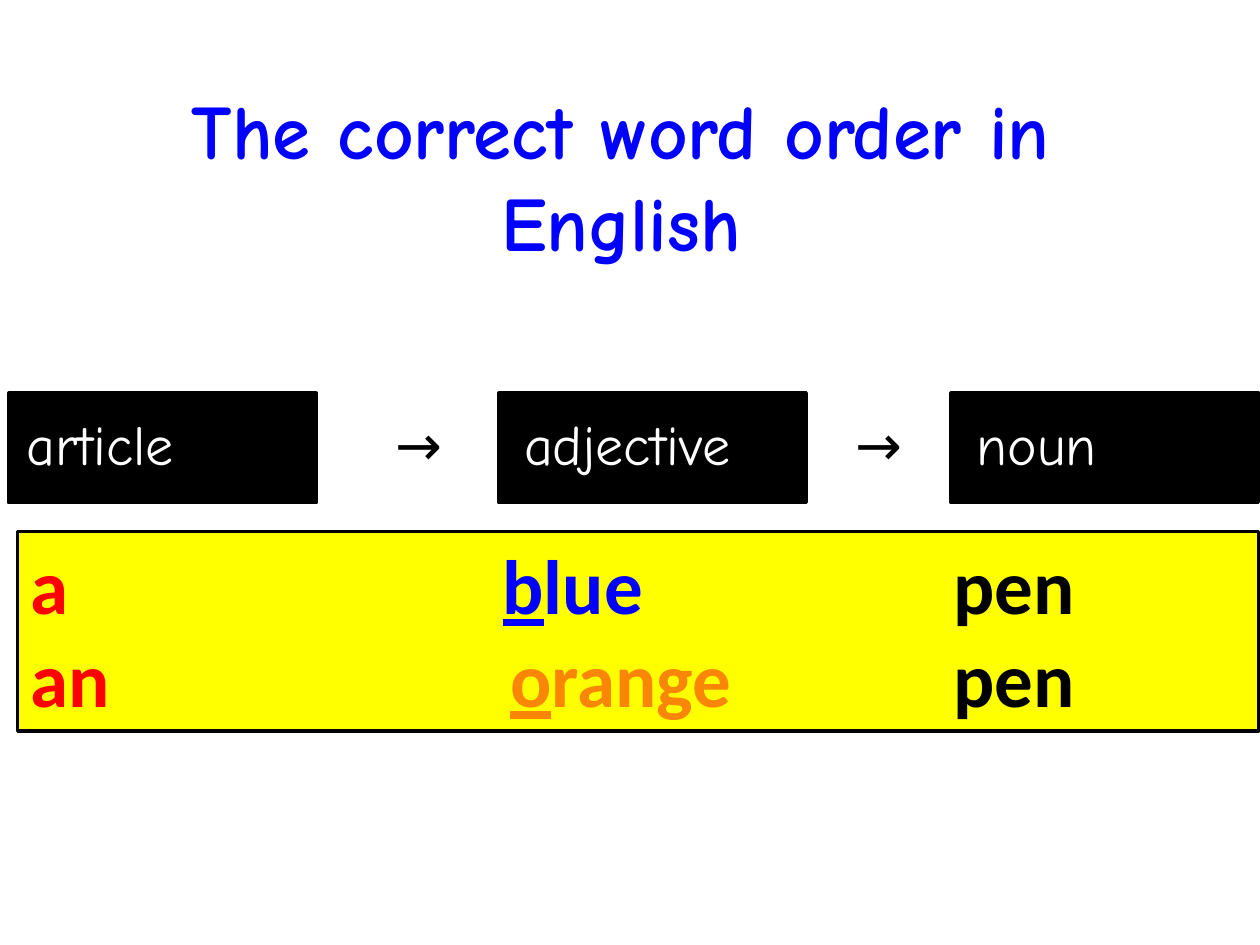
from pptx import Presentation, util as u
from pptx.dml.color import RGBColor
from pptx.enum import shapes, text
from pptx.oxml.ns import qn
from lxml import etree

COLORS = {"blue": "0000FF", "black": "000000", "white": "FFFFFF",
          "yellow": "FFFF00", "red": "FF0000", "orange": "F98607"}
COLUMNS, ROWS = 100, 75
HAND, PLAIN = "Comic Neue", "Calibri"


class WordOrderSlide:
    """Places elements on a grid of COLUMNS by ROWS."""

    def __init__(self, presentation):
        self.slide = presentation.slides.add_slide(presentation.slide_layouts[6])
        self.column = presentation.slide_width / COLUMNS
        self.row = presentation.slide_height / ROWS

    def area(self, left, top, width, height):
        return (round(left * self.column), round(top * self.row),
                round(width * self.column), round(height * self.row))

    def style(self, font, name, size, color=None, bold=False):
        font.name, font.size, font.bold = name, u.Pt(size), bold
        if color:
            font.color.rgb = RGBColor.from_string(COLORS[color])

    def text(self, place, words, size, color, bold=False, inset=1.0,
             align=text.PP_ALIGN.LEFT, anchor=text.MSO_ANCHOR.TOP):
        shape = self.slide.shapes.add_textbox(*self.area(*place))
        self.fill_text(shape, words, size, color, bold, inset, align, anchor)

    def fill_text(self, shape, words, size, color, bold, inset, align, anchor):
        frame = shape.text_frame
        frame.word_wrap = True
        frame.vertical_anchor = anchor
        frame.margin_left = round(inset * self.column)
        paragraph = frame.paragraphs[0]
        paragraph.text = words
        paragraph.alignment = align
        self.style(paragraph.font, HAND, size, color, bold)

    def box(self, place, fill):
        shape = self.slide.shapes.add_shape(
            shapes.MSO_SHAPE.RECTANGLE, *self.area(*place))
        shape.shadow.inherit = False
        shape.fill.solid()
        shape.fill.fore_color.rgb = RGBColor.from_string(COLORS[fill])
        shape.line.color.rgb = RGBColor.from_string(COLORS["black"])
        shape.line.width = u.Pt(2)
        return shape

    def label(self, place, words, inset):
        shape = self.box(place, "black")
        shape.text_frame.margin_bottom = u.Inches(0.12)
        self.fill_text(shape, words, 32, "white", False, inset,
                       text.PP_ALIGN.LEFT, text.MSO_ANCHOR.MIDDLE)

    def examples(self, place, phrases):
        """Each phrase is its tab stops and its (words, color, underline) runs."""
        frame = self.box(place, "yellow").text_frame
        frame.word_wrap = True
        frame.vertical_anchor = text.MSO_ANCHOR.TOP
        for index, (stops, runs) in enumerate(phrases):
            paragraph = frame.add_paragraph() if index else frame.paragraphs[0]
            paragraph.alignment = text.PP_ALIGN.LEFT
            tabs = etree.SubElement(paragraph._p.get_or_add_pPr(), qn("a:tabLst"))
            for stop in stops:
                etree.SubElement(tabs, qn("a:tab"), algn="l",
                                 pos=str(round(stop * self.column)))
            self.style(paragraph.font, PLAIN, 44, bold=True)
            for words, color, underline in runs:
                run = paragraph.add_run()
                run.text = words
                run.font.color.rgb = RGBColor.from_string(COLORS[color])
                run.font.underline = underline


def phrase(article, initial, rest, color, adjective_stop):
    return ((adjective_stop, 73.3),
            [(article + "\t", "red", False), (initial, color, True),
             (rest + "\t", color, False), ("pen", "black", False)])


def main():
    presentation = Presentation()
    presentation.slide_width, presentation.slide_height = u.Inches(10), u.Inches(7.5)
    slide = WordOrderSlide(presentation)
    slide.text((4.3, 7.6, 90, 12.5), "The correct word order in English", 44, "blue",
               bold=True, align=text.PP_ALIGN.CENTER, anchor=text.MSO_ANCHOR.MIDDLE)
    for left, words, inset in ((0.7, "article", 1.4), (39.6, "adjective", 2.0),
                               (75.5, "noun", 2.0)):
        slide.label((left, 31.2, 24.4, 8.7), words, inset)
    for left in (29.2, 65.7):
        slide.text((left, 32, 9.5, 6.4), "→", 32, "black", inset=2.2)
    slide.examples((1.4, 42.2, 98.5, 15.8),
                   [phrase("a", "b", "lue", "blue", 37.5),
                    phrase("an", "o", "range", "orange", 38.1)])
    presentation.save("out.pptx")


if __name__ == "__main__":
    main()
